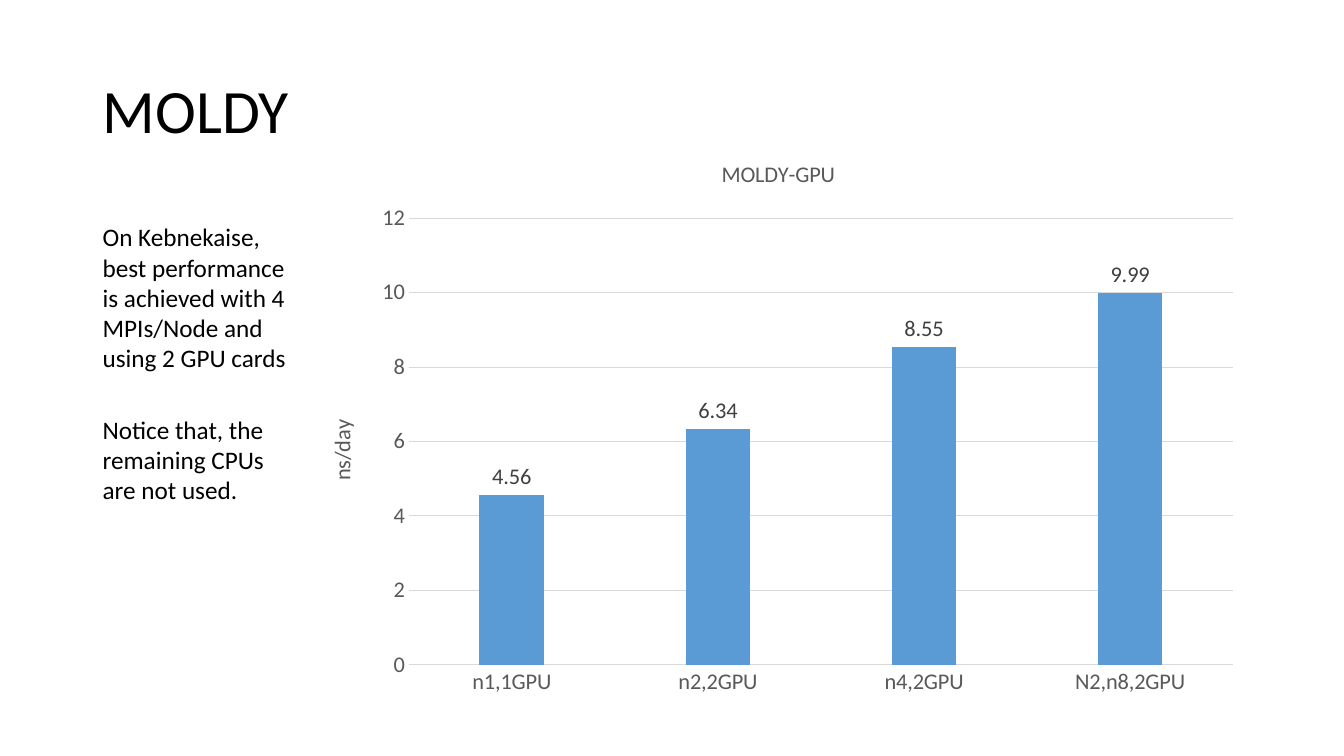
from lxml.etree import SubElement
from pptx import Presentation
from pptx.chart.data import CategoryChartData
from pptx.dml.color import RGBColor
from pptx.enum.chart import XL_CHART_TYPE, XL_LABEL_POSITION, XL_TICK_MARK
from pptx.enum.text import MSO_ANCHOR, PP_ALIGN
from pptx.oxml.ns import qn
from pptx.util import Inches, Pt

BLACK = RGBColor(0x00, 0x00, 0x00)
DARK = RGBColor(0x40, 0x40, 0x40)
GRAY = RGBColor(0x59, 0x59, 0x59)
PALE = RGBColor(0xD9, 0xD9, 0xD9)
BLUE = RGBColor(0x5B, 0x9B, 0xD5)
FACE = "Calibri"


def style(font, size, color):
    font.name = FACE
    font.size = Pt(size)
    font.bold = False
    font.color.rgb = color


def rule(line):
    line.color.rgb = PALE
    line.width = Pt(0.75)


def add_title(slide, text, left, top, width, height):
    title = slide.shapes.title
    title.left, title.top = Inches(left), Inches(top)
    title.width, title.height = Inches(width), Inches(height)
    frame = title.text_frame
    frame.text = text
    frame.vertical_anchor = MSO_ANCHOR.MIDDLE
    para = frame.paragraphs[0]
    para.alignment = PP_ALIGN.LEFT
    para.line_spacing = 0.9
    style(para.font, 44, BLACK)


def add_note(slide, text, left, top, width, height):
    box = slide.shapes.add_textbox(
        Inches(left), Inches(top), Inches(width), Inches(height))
    frame = box.text_frame
    frame.word_wrap = True
    frame.text = text
    style(frame.paragraphs[0].font, 18, BLACK)


def set_title(owner, text):
    frame = owner.text_frame
    frame.text = text
    style(frame.paragraphs[0].font, 16, GRAY)


def place_plot(chart, left, top, width, height):
    plot = chart.element.find(".//" + qn("c:plotArea"))
    for old in plot.findall(qn("c:layout")):
        plot.remove(old)
    layout = SubElement(plot, qn("c:layout"))
    plot.insert(0, layout)
    manual = SubElement(layout, qn("c:manualLayout"))
    parts = [("layoutTarget", "inner"), ("xMode", "edge"), ("yMode", "edge"),
             ("x", left), ("y", top), ("w", width), ("h", height)]
    for tag, val in parts:
        SubElement(manual, qn("c:" + tag)).set("val", str(val))


def add_bars(slide, left, top, width, height):
    data = CategoryChartData()
    data.categories = ["n1,1GPU", "n2,2GPU", "n4,2GPU", "N2,n8,2GPU"]
    data.add_series("Series 1", [4.56, 6.34, 8.55, 9.99])
    chart = slide.shapes.add_chart(
        XL_CHART_TYPE.COLUMN_CLUSTERED, Inches(left), Inches(top),
        Inches(width), Inches(height), data).chart
    style(chart.font, 16, GRAY)
    chart.has_legend = False
    set_title(chart.chart_title, "MOLDY-GPU")
    place_plot(chart, 0.11, 0.14, 0.87, 0.78)

    cats, vals = chart.category_axis, chart.value_axis
    for axis in (cats, vals):
        axis.major_tick_mark = XL_TICK_MARK.NONE
        axis.minor_tick_mark = XL_TICK_MARK.NONE
        style(axis.tick_labels.font, 16, GRAY)
    rule(cats.format.line)
    vals.format.line.fill.background()
    vals.minimum_scale, vals.maximum_scale, vals.major_unit = 0, 12, 2
    vals.has_major_gridlines = True
    rule(vals.major_gridlines.format.line)
    set_title(vals.axis_title, "ns/day")

    plot = chart.plots[0]
    plot.gap_width, plot.overlap = 219, -27
    plot.vary_by_categories = False
    fill = plot.series[0].format.fill
    fill.solid()
    fill.fore_color.rgb = BLUE
    labels = plot.series[0].data_labels
    labels.show_value = True
    labels.position = XL_LABEL_POSITION.OUTSIDE_END
    style(labels.font, 16, DARK)


def main():
    deck = Presentation()
    deck.slide_width, deck.slide_height = Inches(13.33), Inches(7.5)
    slide = deck.slides.add_slide(deck.slide_layouts[5])
    add_title(slide, "MOLDY", 0.92, 0.4, 11.5, 1.45)
    add_note(slide, "On Kebnekaise, best performance is achieved with "
             "4 MPIs/Node and using 2 GPU cards", 0.92, 2.15, 2.1, 1.62)
    add_bars(slide, 3.02, 1.37, 9.4, 5.68)
    add_note(slide, "Notice that, the remaining CPUs are not used.",
             0.92, 4.06, 2.1, 1.01)
    deck.save("out.pptx")


if __name__ == "__main__":
    main()
